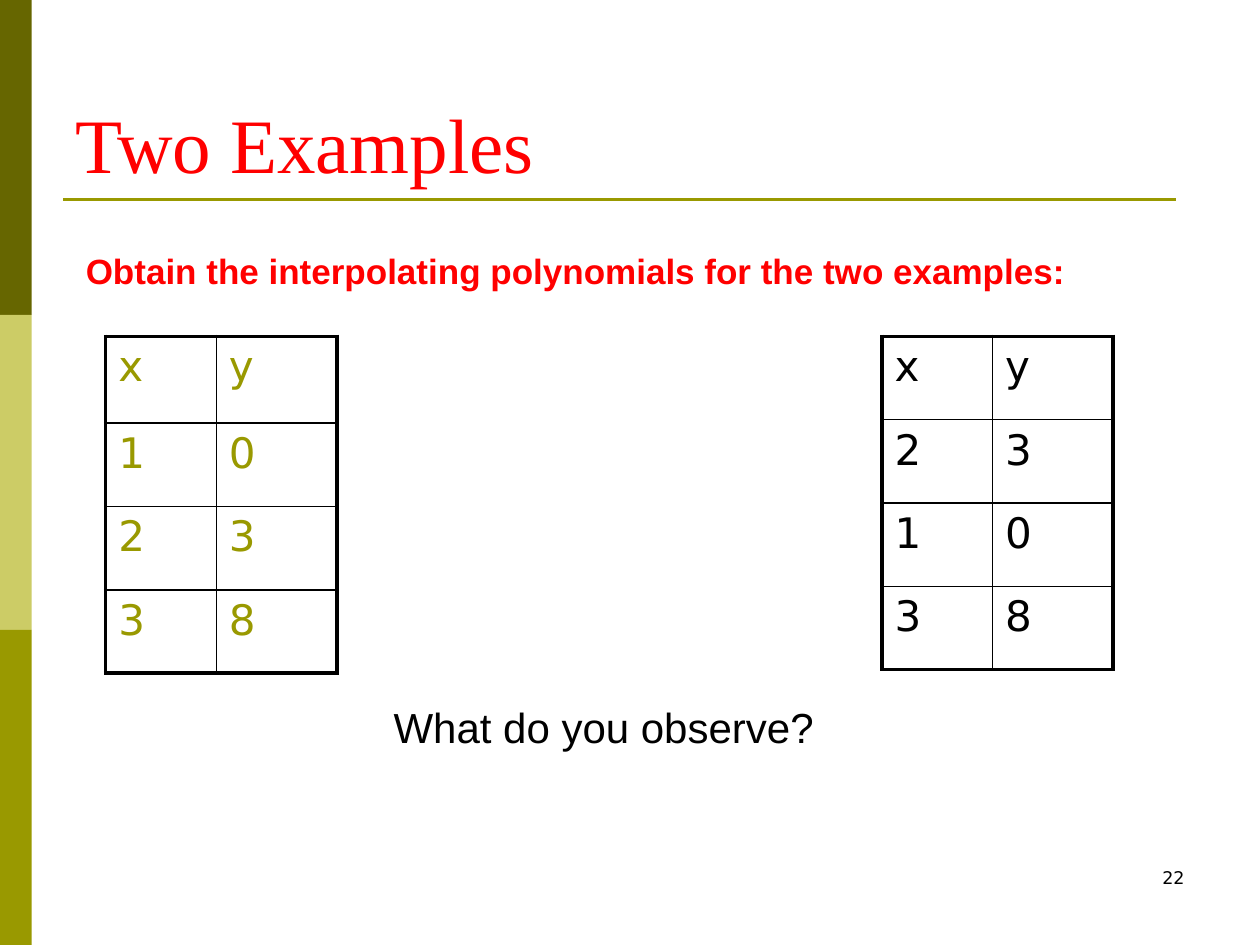
from lxml.etree import SubElement
from pptx import Presentation
from pptx.dml.color import RGBColor
from pptx.enum.shapes import MSO_CONNECTOR, MSO_SHAPE
from pptx.enum.text import MSO_ANCHOR, PP_ALIGN
from pptx.oxml.ns import qn
from pptx.util import Cm, Pt

COLORS = {
    "dark olive": "666600",
    "light olive": "CCCC66",
    "olive": "999900",
    "red": "FF0000",
    "black": "000000",
}


def add_run(paragraph, text, size, font, color, bold=False):
    run = paragraph.add_run()
    run.text = text
    run.font.size = Pt(size)
    run.font.name = font
    run.font.bold = bold
    run.font.color.rgb = RGBColor.from_string(COLORS[color])


def set_border(cell, side, width):
    properties = cell._tc.get_or_add_tcPr()
    line = SubElement(properties, qn(f"a:ln{side}"), w=str(Pt(width)))
    fill = SubElement(line, qn("a:solidFill"))
    SubElement(fill, qn("a:srgbClr"), val=COLORS["black"])


presentation = Presentation()
presentation.slide_width = Cm(25.4)
presentation.slide_height = Cm(19.05)
slide = presentation.slides.add_slide(presentation.slide_layouts[6])

# Left band in three equal parts
for index, color in enumerate(("dark olive", "light olive", "olive")):
    shape = slide.shapes.add_shape(
        MSO_SHAPE.RECTANGLE, 0, Cm(6.35 * index), Cm(0.64), Cm(6.35))
    shape.shadow.inherit = False
    shape.fill.solid()
    shape.fill.fore_color.rgb = RGBColor.from_string(COLORS[color])
    shape.line.fill.background()

# Rule under the title
rule = slide.shapes.add_connector(
    MSO_CONNECTOR.STRAIGHT, Cm(1.27), Cm(4.02), Cm(23.7), Cm(4.02))
rule.line.color.rgb = RGBColor.from_string(COLORS["olive"])
rule.line.width = Pt(1.5)
SubElement(rule._element.spPr, qn("a:effectLst"))

# Title, task, question and slide number
texts = [
    ("Two Examples", (1.27, 0.76, 22.86, 3.18), 44, "Times New Roman", "red",
     False, PP_ALIGN.LEFT, MSO_ANCHOR.BOTTOM),
    ("Obtain the interpolating polynomials for the two examples:",
     (1.48, 4.9, 21.39, 1.1), 20, "Arial", "red",
     True, PP_ALIGN.LEFT, MSO_ANCHOR.TOP),
    ("What do you observe?", (2.96, 14.02, 18.42, 1.27), 24, "Arial", "black",
     False, PP_ALIGN.CENTER, MSO_ANCHOR.TOP),
    ("22", (18.2, 17.35, 5.93, 1.27), 10, "DejaVu Sans", "black",
     False, PP_ALIGN.RIGHT, MSO_ANCHOR.TOP),
]
for text, box, size, font, color, bold, alignment, anchor in texts:
    shape = slide.shapes.add_textbox(*(Cm(length) for length in box))
    frame = shape.text_frame
    frame.word_wrap = True
    frame.vertical_anchor = anchor
    paragraph = frame.paragraphs[0]
    paragraph.alignment = alignment
    add_run(paragraph, text, size, font, color, bold)

# Data tables: thick outer frame, thin inner grid
tables = [
    (2.13, "olive", 1.75, ["xy", "10", "23", "38"]),
    (17.78, "black", 1.68, ["xy", "23", "10", "38"]),
]
for left, color, header_height, rows in tables:
    heights = [header_height] + [1.68] * 3
    widths = [2.23, 2.43]
    table = slide.shapes.add_table(
        4, 2, Cm(left), Cm(6.78), Cm(sum(widths)), Cm(sum(heights))).table
    table.first_row = False
    table.horz_banding = False
    for column, width in zip(table.columns, widths):
        column.width = Cm(width)
    for row_index, (values, height) in enumerate(zip(rows, heights)):
        table.rows[row_index].height = Cm(height)
        for column_index, value in enumerate(values):
            cell = table.cell(row_index, column_index)
            add_run(cell.text_frame.paragraphs[0], value, 24, "DejaVu Sans", color)
            outer_sides = {
                "L": column_index == 0, "R": column_index == 1,
                "T": row_index == 0, "B": row_index == 3,
            }
            for side, is_outer in outer_sides.items():
                set_border(cell, side, 2.25 if is_outer else 1)
            cell.fill.background()

presentation.save("out.pptx")
